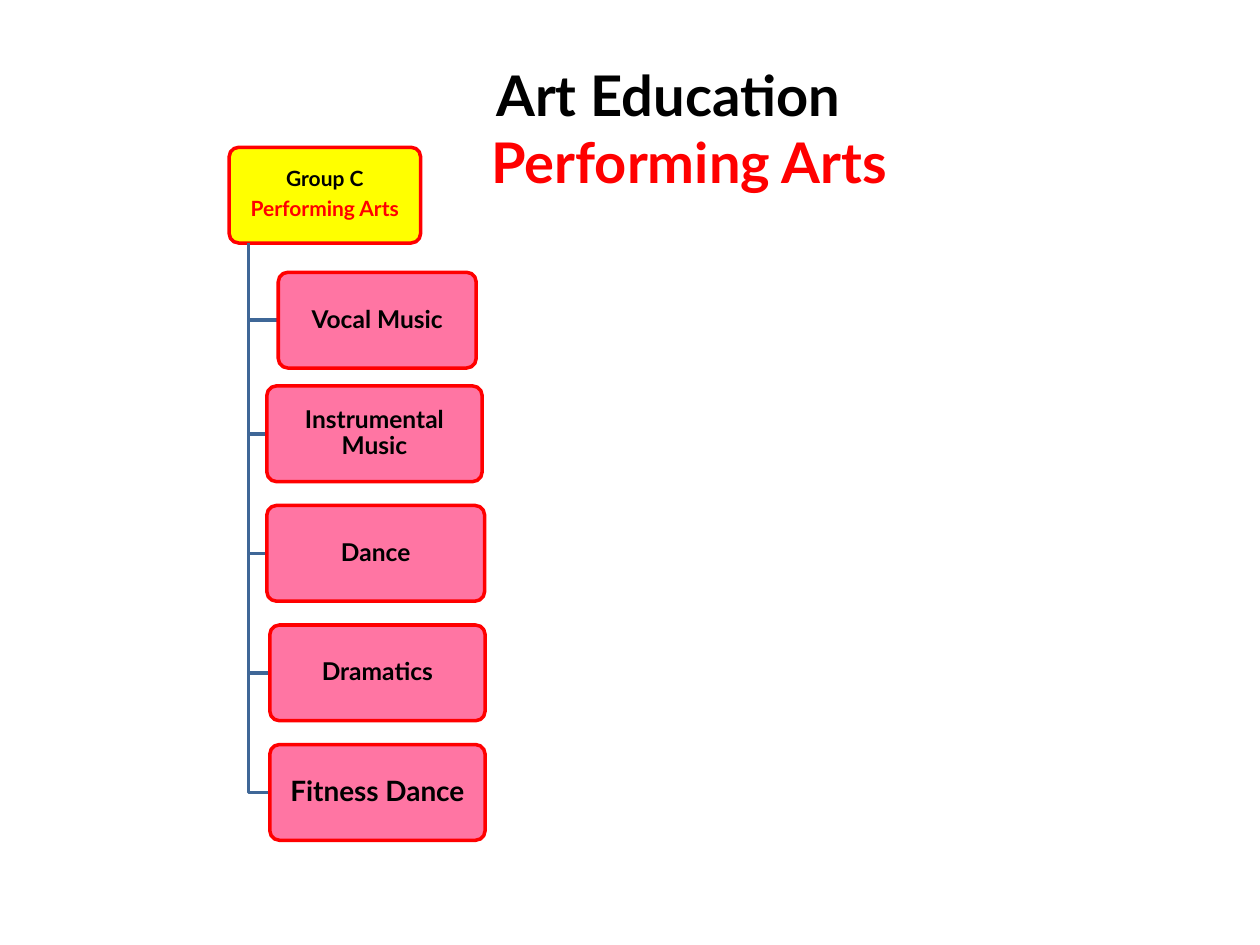
from pptx import Presentation
from pptx.dml.color import RGBColor
from pptx.enum.shapes import MSO_SHAPE as SHAPE
from pptx.enum.text import MSO_ANCHOR as ANCHOR, MSO_AUTO_SIZE as AUTO, PP_ALIGN as ALIGN
from pptx.oxml.ns import qn
from pptx.util import Cm, Pt
from lxml.etree import SubElement

BLACK = RGBColor(0x00, 0x00, 0x00)
RED = RGBColor(0xFF, 0x00, 0x00)
YELLOW = RGBColor(0xFF, 0xFF, 0x00)
PINK = RGBColor(0xFF, 0x66, 0x99)
BLUE = RGBColor(0x3F, 0x67, 0x97)
FONT = "Lato"

BOX_H = 1.93
PITCH = 2.41
BRANCHES = [
    ("Vocal Music", 0.99, 2.52, 3.99, 14),
    ("Instrumental Music", 0.76, 4.81, 4.34, 14),
    ("Dance", 0.76, 4.81 + PITCH, 4.39, 14),
    ("Dramatics", 0.82, 4.81 + 2 * PITCH, 4.34, 14),
    ("Fitness Dance", 0.82, 4.81 + 3 * PITCH, 4.34, 16),
]


def write_lines(tf, lines, size):
    """Write centred bold lines, given as (text, colour) pairs."""
    tf.word_wrap = True
    for i, (text, color) in enumerate(lines):
        p = tf.paragraphs[0] if i == 0 else tf.add_paragraph()
        p.text = text
        p.alignment = ALIGN.CENTER
        p.font.name = FONT
        p.font.size = Pt(size)
        p.font.bold = True
        p.font.color.rgb = color


def add_title(slide, left, top, width, height):
    """Place the two-line title, each line indented from the left."""
    sp = slide.shapes.title
    sp.left, sp.top, sp.width, sp.height = Cm(left), Cm(top), Cm(width), Cm(height)
    tf = sp.text_frame
    tf.auto_size = AUTO.NONE
    tf.vertical_anchor = ANCHOR.TOP
    write_lines(tf, [("Art Education", BLACK), ("Performing Arts", RED)], 32)
    for p, indent in zip(tf.paragraphs, (1.04, 1.9)):
        pPr = p._p.get_or_add_pPr()
        pPr.set("marL", str(Cm(indent)))
        pPr.set("indent", "0")


def add_box(slide, left, top, width, fill, lines, size):
    """Add a rounded box with a red outline and centred text."""
    sp = slide.shapes.add_shape(SHAPE.ROUNDED_RECTANGLE, Cm(left), Cm(top), Cm(width), Cm(BOX_H))
    sp.adjustments[0] = 0.1
    sp.shadow.inherit = False
    sp.fill.solid()
    sp.fill.fore_color.rgb = fill
    sp.line.color.rgb = RED
    sp.line.width = Pt(2)
    tf = sp.text_frame
    tf.vertical_anchor = ANCHOR.MIDDLE
    tf.margin_left = tf.margin_right = Cm(0.13)
    tf.margin_top = tf.margin_bottom = Cm(0.1)
    write_lines(tf, lines, size)
    for p in tf.paragraphs:
        p.line_spacing = 0.9
    for p in tf.paragraphs[:-1]:
        p.space_after = Pt(0.35 * size)
    return sp


def add_elbow(slide, x, y, end_x, end_y):
    """Draw an open line going down and then right."""
    builder = slide.shapes.build_freeform(Cm(x), Cm(y))
    builder.add_line_segments([(Cm(x), Cm(end_y)), (Cm(end_x), Cm(end_y))], close=False)
    sp = builder.convert_to_shape()
    sp.shadow.inherit = False
    sp.fill.background()
    sp.line.color.rgb = BLUE
    sp.line.width = Pt(2)


def add_tree(slide, left, top, width):
    """Draw the group box with its branches hanging below it."""
    add_box(slide, left, top, width, YELLOW, [("Group C", BLACK), ("Performing Arts", RED)], 12)
    trunk = left + width / 10
    for name, dx, dy, box_w, size in BRANCHES:
        x, y = left + dx, top + dy
        add_elbow(slide, trunk, top + BOX_H, x, y + BOX_H / 2)
        sp = add_box(slide, x, y, box_w, PINK, [(name, BLACK)], size)
        clr = sp._element.spPr.find(qn("a:solidFill"))[0]
        SubElement(clr, qn("a:alpha")).set("val", "90000")


def main():
    """Build the slide and save it."""
    prs = Presentation()
    prs.slide_width, prs.slide_height = Cm(25.4), Cm(19.05)
    slide = prs.slides.add_slide(prs.slide_layouts[5])
    add_title(slide, 4.45, 1.09, 17, 4.37)
    add_tree(slide, 4.62, 2.97, 3.86)
    prs.save("out.pptx")


if __name__ == "__main__":
    main()
